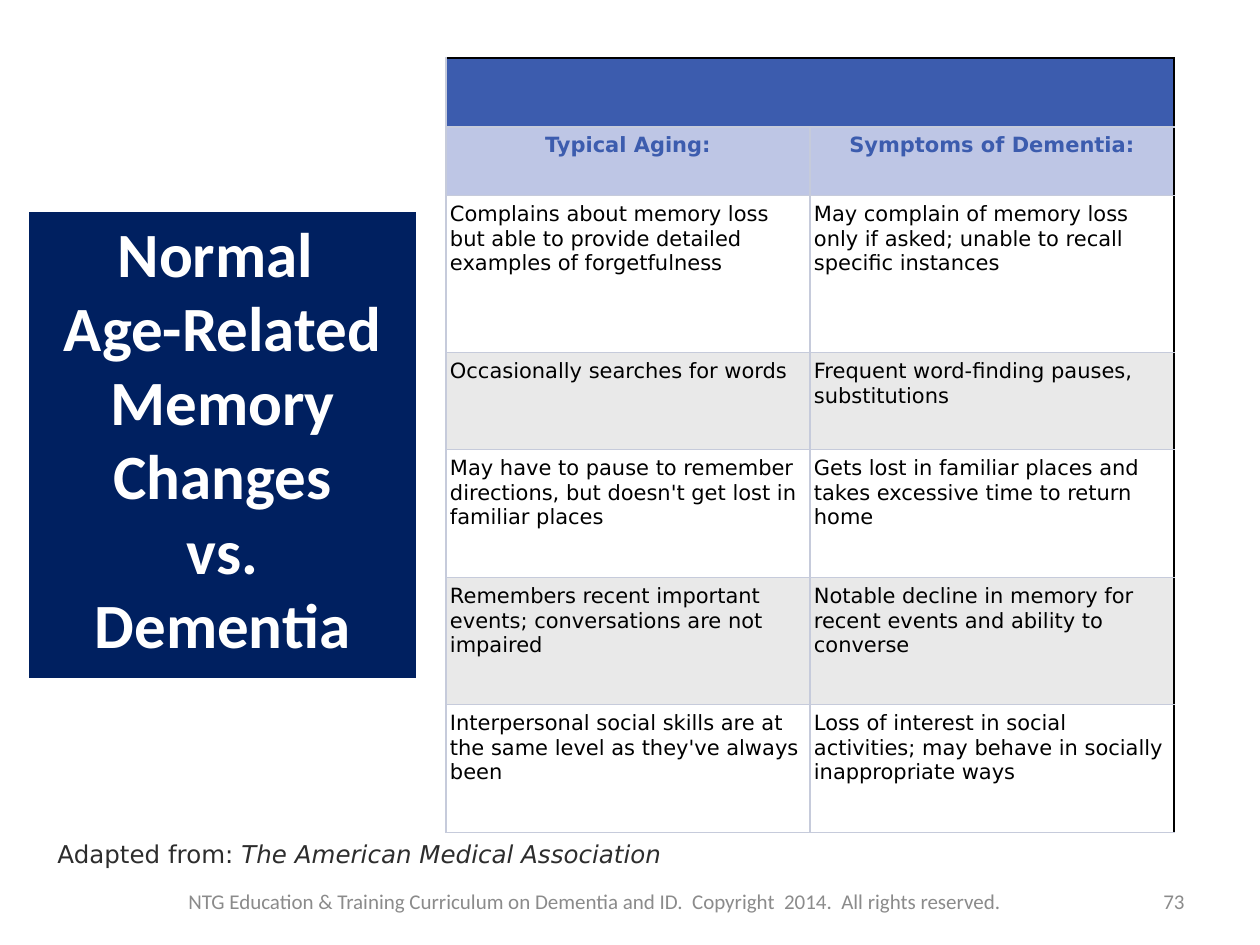
"""Build the slide comparing typical aging with symptoms of dementia."""
from lxml import etree
from pptx import Presentation
from pptx.dml.color import RGBColor
from pptx.enum.text import MSO_ANCHOR, MSO_AUTO_SIZE, PP_ALIGN
from pptx.oxml.ns import qn
from pptx.util import Emu, Pt

TITLE = ["Normal ", "Age-Related Memory Changes", "vs.", "Dementia"]
HEADINGS = ("Typical Aging:", "Symptoms of Dementia:")
COMPARISONS = [
    ("Complains about memory loss but able to provide detailed examples of forgetfulness",
     "May complain of memory loss only if asked; unable to recall specific instances"),
    ("Occasionally searches for words",
     "Frequent word-finding pauses, substitutions"),
    ("May have to pause to remember directions, but doesn't get lost in familiar places",
     "Gets lost in familiar places and takes excessive time to return home"),
    ("Remembers recent important events; conversations are not impaired",
     "Notable decline in memory for recent events and ability to converse"),
    ("Interpersonal social skills are at the same level as they've always been",
     "Loss of interest in social activities; may behave in socially inappropriate ways"),
]
SOURCE = [("Adapted from:\u00a0".replace("\u00a0", " "), False),
          ("The American Medical Association", True)]
FOOTER = "NTG Education & Training Curriculum on Dementia and ID.  Copyright  2014.  All rights reserved."
PAGE = "73"

ROW_HEIGHTS = [69, 69, 157, 97, 128, 127, 128]
COLUMN_WIDTH = 364
TABLE_LEFT, TABLE_TOP = 446, 58

WHITE = RGBColor(0xFF, 0xFF, 0xFF)
BLACK = RGBColor(0x00, 0x00, 0x00)
NAVY = RGBColor(0x00, 0x20, 0x60)
BLUE = RGBColor(0x3C, 0x5C, 0xAE)
PALE_BLUE = RGBColor(0xBE, 0xC6, 0xE5)
BAND = RGBColor(0xE9, 0xE9, 0xE9)
RULE = RGBColor(0xC6, 0xCB, 0xDB)
CHARCOAL = RGBColor(0x2D, 0x2D, 0x2D)
GRAY = RGBColor(0x8B, 0x8B, 0x8B)


def px(length):
    return Emu(length * 914400 // 126)


def style(paragraph, face, size, color, bold=False, align=PP_ALIGN.LEFT):
    paragraph.alignment = align
    font = paragraph.font
    font.name, font.size, font.bold = face, Pt(size), bold
    font.color.rgb = color


def add_border(cell, side, color, width):
    line = etree.SubElement(cell._tc.get_or_add_tcPr(), qn(f"a:ln{side}"), w=str(Pt(width)))
    fill = etree.SubElement(line, qn("a:solidFill"))
    etree.SubElement(fill, qn("a:srgbClr"), val=str(color))


def format_cell(cell, fill, is_top, is_right):
    for side, is_outer in (("L", False), ("R", is_right), ("T", is_top), ("B", False)):
        add_border(cell, side, *((BLACK, 0.96) if is_outer else (RULE, 0.75)))
    cell.fill.solid()
    cell.fill.fore_color.rgb = fill


def add_title(slide):
    title = slide.shapes.title
    title.left, title.top, title.width, title.height = map(px, (29, 212, 387, 466))
    title.fill.solid()
    title.fill.fore_color.rgb = NAVY
    frame = title.text_frame
    frame.auto_size = MSO_AUTO_SIZE.NONE
    frame.vertical_anchor = MSO_ANCHOR.TOP
    frame.text = "\n".join(TITLE)
    for paragraph in frame.paragraphs:
        paragraph.line_spacing = 0.98
        style(paragraph, "Calibri", 36, WHITE, True, PP_ALIGN.CENTER)


def add_comparison(slide):
    rows = [("", ""), HEADINGS, *COMPARISONS]
    table = slide.shapes.add_table(
        len(rows), 2, px(TABLE_LEFT), px(TABLE_TOP),
        px(2 * COLUMN_WIDTH), px(sum(ROW_HEIGHTS))).table
    for column in table.columns:
        column.width = px(COLUMN_WIDTH)
    for r, (texts, height) in enumerate(zip(rows, ROW_HEIGHTS)):
        table.rows[r].height = px(height)
        fill = (BLUE, PALE_BLUE)[r] if r < 2 else (WHITE, BAND)[r % 2]
        for c, text in enumerate(texts):
            cell = table.cell(r, c)
            format_cell(cell, fill, r == 0, r == 0 or c == 1)
            if not text:
                continue
            cell.text = text
            paragraph = cell.text_frame.paragraphs[0]
            if r == 1:
                cell.margin_left = cell.margin_right = px(5)
                style(paragraph, "DejaVu Sans", 12, BLUE, True, PP_ALIGN.CENTER)
            else:
                cell.margin_left, cell.margin_right = px(4), px(9)
                style(paragraph, "DejaVu Sans", 12, BLACK)
    table.cell(0, 0).merge(table.cell(0, 1))


def add_note(slide, box, runs, face, size, color, align, anchor):
    frame = slide.shapes.add_textbox(*map(px, box)).text_frame
    frame.word_wrap = True
    frame.vertical_anchor = anchor
    paragraph = frame.paragraphs[0]
    for text, italic in runs:
        run = paragraph.add_run()
        run.text = text
        if italic:
            run.font.italic = True
    style(paragraph, face, size, color, align=align)


def main():
    deck = Presentation()
    deck.slide_width, deck.slide_height = px(1260), px(945)
    slide = deck.slides.add_slide(deck.slide_layouts[5])
    add_title(slide)
    add_comparison(slide)
    add_note(slide, (45, 833, 1129, 42), SOURCE, "DejaVu Sans", 14, CHARCOAL,
             PP_ALIGN.LEFT, MSO_ANCHOR.TOP)
    for box, text, align in (((91, 876, 1008, 50), FOOTER, PP_ALIGN.CENTER),
                             ((903, 876, 294, 50), PAGE, PP_ALIGN.RIGHT)):
        add_note(slide, box, [(text, False)], "Calibri", 12, GRAY, align, MSO_ANCHOR.MIDDLE)
    deck.save("out.pptx")


if __name__ == "__main__":
    main()
